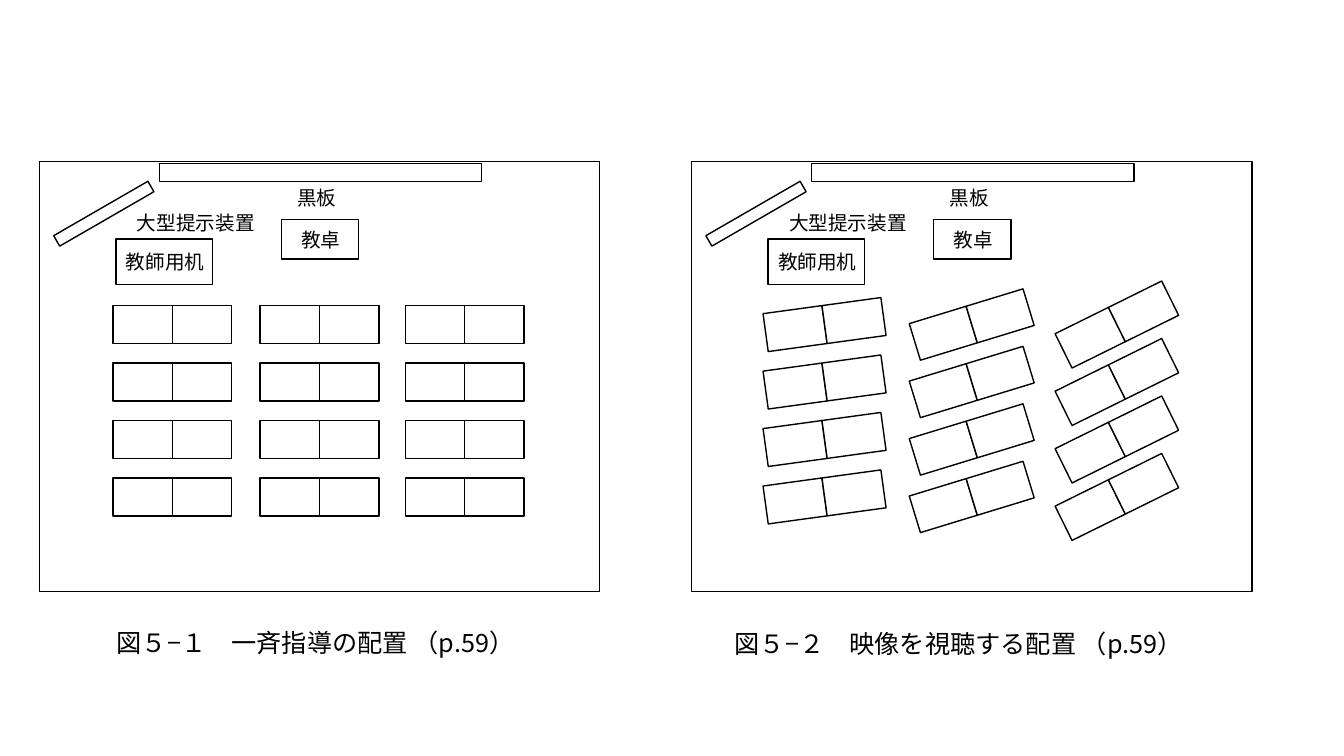
from itertools import product
from math import cos, radians, sin

from lxml.etree import SubElement
from pptx import Presentation
from pptx.dml.color import RGBColor
from pptx.enum.shapes import MSO_SHAPE
from pptx.enum.text import MSO_ANCHOR, MSO_AUTO_SIZE, PP_ALIGN
from pptx.oxml.ns import qn
from pptx.util import Inches, Pt

CELL = 0.1  # inches per grid column and row
COLUMNS, ROWS = 133.33, 75
COLORS = {"ink": "000000", "desk": "FFFFFF"}
FONT = "Noto Sans CJK JP"

DESK_WIDTH, DESK_HEIGHT = 5.9, 3.8
PAIR_CENTERS = (17.1, 31.7, 46.1)  # measured from the left of the first room's page area
FIRST_PAIR_ROW, PAIR_ROW_STEP, PAIR_ROWS = 32.2, 5.7, 4
ROOM_STEP = 64.7

FURNITURE = {  # left, top, width, height, rotation
    "room": (3.9, 16, 55.6, 42.7, 0),
    "lectern": (27.9, 21.8, 7.7, 3.9, 0),
    "blackboard": (15.8, 16.2, 32, 1.8, 0),
    "teacher desk": (11.5, 23.7, 9.6, 4.5, 0),
    "large display": (4.9, 20.6, 10.8, 1.2, 330),
}
LABELS = (  # text, left, top, width
    ("黒板", 28.5, 18, 5.9),
    ("教卓", 28.9, 22.1, 5.9),
    ("教師用机", 11.5, 24.3, 9.9),
    ("大型提示装置", 12.6, 20.4, 13.8),
)
CAPTIONS = (  # runs, left, top, width
    (("図５−１\u3000", "一斉指導の配置 ", "（p.59）"), 10.6, 61.7, 43),
    (("図５−２\u3000", "映像を視聴する配置 ", "（p.59）"), 71.9, 61.8, 48.1),
)
ROOM_ANGLES = ((0, 0, 0), (-7.8, -17, -26.3))  # one angle per column of desks


def grid(cells):
    return Inches(cells * CELL)


class ClassroomPage:
    def __init__(self, deck):
        self.page = deck.slides.add_slide(deck.slide_layouts[6])

    def rectangle(self, left, top, width, height, rotation=0, fill=None, parent=None):
        shapes = (parent or self.page).shapes
        box = shapes.add_shape(
            MSO_SHAPE.RECTANGLE, grid(left), grid(top), grid(width), grid(height))
        box.rotation = rotation
        box.shadow.inherit = False
        box.line.color.rgb = RGBColor.from_string(COLORS["ink"])
        box.line.width = Pt(1)
        if fill:
            box.fill.solid()
            box.fill.fore_color.rgb = RGBColor.from_string(COLORS[fill])
        else:
            box.fill.background()

    def text(self, runs, left, top, width, height, size):
        box = self.page.shapes.add_textbox(grid(left), grid(top), grid(width), grid(height))
        frame = box.text_frame
        frame.word_wrap = False
        frame.auto_size = MSO_AUTO_SIZE.SHAPE_TO_FIT_TEXT
        frame.vertical_anchor = MSO_ANCHOR.TOP
        para = frame.paragraphs[0]
        para.alignment = PP_ALIGN.LEFT
        for words in runs:
            span = para.add_run()
            span.text = words
            span.font.size = Pt(size)
            span.font.color.rgb = RGBColor.from_string(COLORS["ink"])
            span.font.name = FONT
            SubElement(span.font._element, qn("a:ea"), typeface=FONT)

    def desk_pair(self, center_x, center_y, angle):
        """Two desks side by side, turned together about their shared edge."""
        pair = self.page.shapes.add_group_shape()
        for side in (-0.5, 0.5):
            desk_x = center_x + side * DESK_WIDTH * cos(radians(angle))
            desk_y = center_y + side * DESK_WIDTH * sin(radians(angle))
            self.rectangle(desk_x - DESK_WIDTH / 2, desk_y - DESK_HEIGHT / 2,
                           DESK_WIDTH, DESK_HEIGHT, angle, "desk", pair)

    def room(self, offset, angles):
        for (center, angle), row in product(zip(PAIR_CENTERS, angles), range(PAIR_ROWS)):
            self.desk_pair(center + offset, FIRST_PAIR_ROW + row * PAIR_ROW_STEP, angle)
        for left, *rest in FURNITURE.values():
            self.rectangle(left + offset, *rest)
        for words, left, top, width in LABELS:
            self.text([words], left + offset, top, width, 3.4, 14)


def main():
    deck = Presentation()
    deck.slide_width, deck.slide_height = grid(COLUMNS), grid(ROWS)
    classroom = ClassroomPage(deck)
    for number, angles in enumerate(ROOM_ANGLES):
        classroom.room(number * ROOM_STEP, angles)
    for runs, left, top, width in CAPTIONS:
        classroom.text(runs, left, top, width, 4, 18)
    deck.save("out.pptx")


if __name__ == "__main__":
    main()
